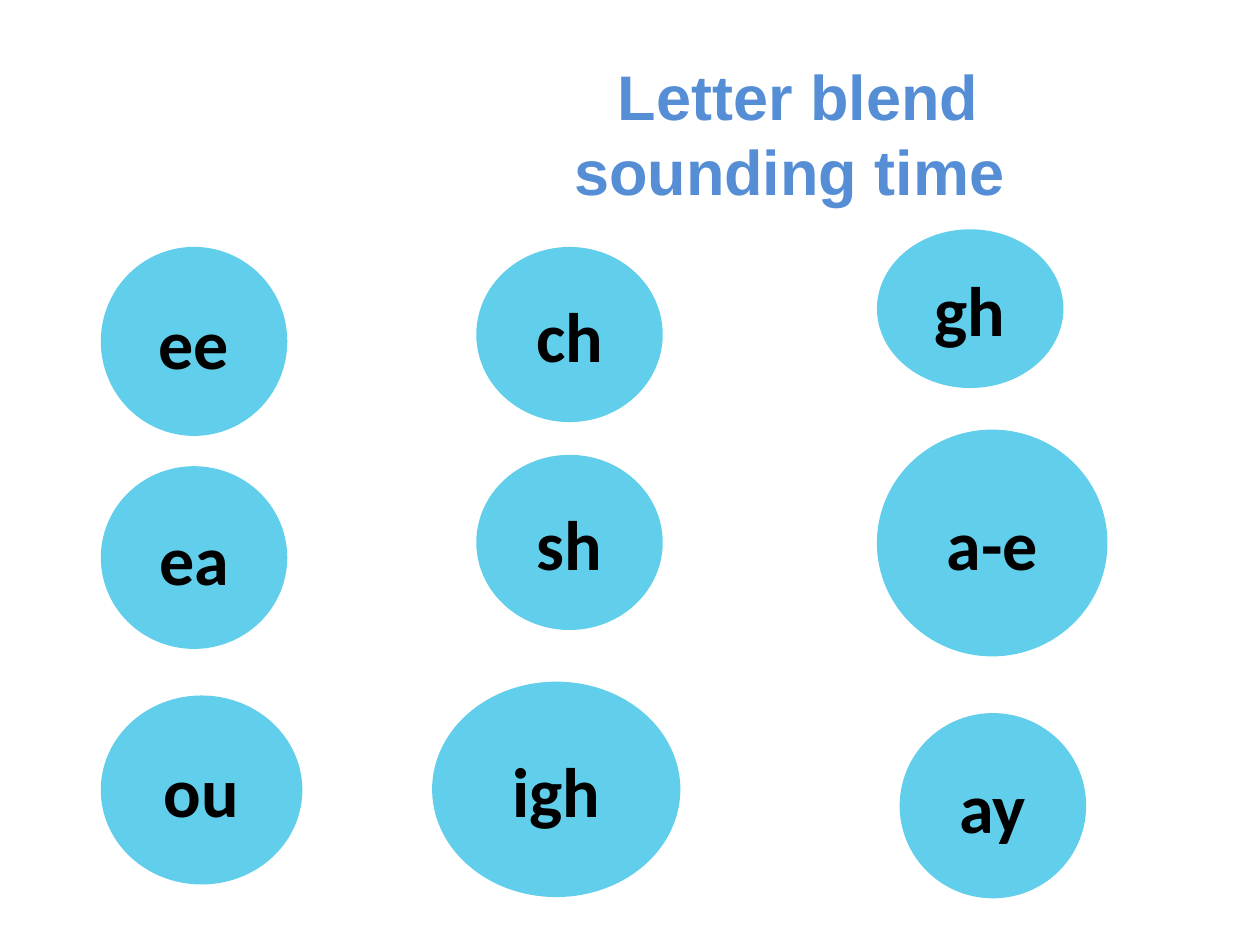
from dataclasses import dataclass

import pptx
import pptx.dml.color
import pptx.enum.shapes
import pptx.enum.text
import pptx.util
from pptx.util import Inches


@dataclass(frozen=True)
class Theme:
    heading_color: str = "558ED5"
    bubble_color: str = "61CFEB"
    letter_color: str = "000000"
    heading_font: str = "Arial"
    letter_font: str = "Calibri"
    heading_size: int = 36
    letter_size: int = 40


THEME = Theme()

BLENDS = [
    ("ee", (0.8, 1.96, 1.48, 1.5)),
    ("gh", (6.96, 1.82, 1.48, 1.26)),
    ("ch", (3.78, 1.96, 1.48, 1.39)),
    ("ea", (0.8, 3.7, 1.48, 1.45)),
    ("a-e", (6.96, 3.41, 1.83, 1.8)),
    ("sh", (3.78, 3.61, 1.48, 1.39)),
    ("ou", (0.8, 5.52, 1.6, 1.5)),
    ("ay", (7.14, 5.66, 1.48, 1.47)),
    ("igh", (3.43, 5.41, 1.97, 1.71)),
]


def rgb(color):
    return pptx.dml.color.RGBColor.from_string(color)


def write(frame, words, font_name, size, color):
    frame.text = words
    frame.word_wrap = True
    frame.auto_size = pptx.enum.text.MSO_AUTO_SIZE.NONE
    frame.vertical_anchor = pptx.enum.text.MSO_ANCHOR.MIDDLE
    paragraph = frame.paragraphs[0]
    paragraph.alignment = pptx.enum.text.PP_ALIGN.CENTER
    font = paragraph.runs[0].font
    font.name = font_name
    font.size = pptx.util.Pt(size)
    font.bold = True
    font.color.rgb = rgb(color)


def place_heading(slide, box):
    heading = slide.shapes.title
    heading.left, heading.top, heading.width, heading.height = map(Inches, box)
    write(heading.text_frame, " Letter blend sounding time",
          THEME.heading_font, THEME.heading_size, THEME.heading_color)


def place_bubble(slide, blend, box):
    bubble = slide.shapes.add_shape(
        pptx.enum.shapes.MSO_SHAPE.OVAL, *map(Inches, box))
    bubble.shadow.inherit = False
    bubble.fill.solid()
    bubble.fill.fore_color.rgb = rgb(THEME.bubble_color)
    bubble.line.fill.background()
    frame = bubble.text_frame
    frame.margin_left = frame.margin_right = Inches(0)
    frame.margin_top = frame.margin_bottom = Inches(0)
    write(frame, blend, THEME.letter_font, THEME.letter_size, THEME.letter_color)


def main():
    deck = pptx.Presentation()
    deck.slide_width = Inches(10)
    deck.slide_height = Inches(7.5)
    slide = deck.slides.add_slide(deck.slide_layouts.get_by_name("Title Only"))
    place_heading(slide, (3.55, 0.4, 5.43, 1.31))
    for blend, box in BLENDS:
        place_bubble(slide, blend, box)
    deck.save("out.pptx")


if __name__ == "__main__":
    main()
